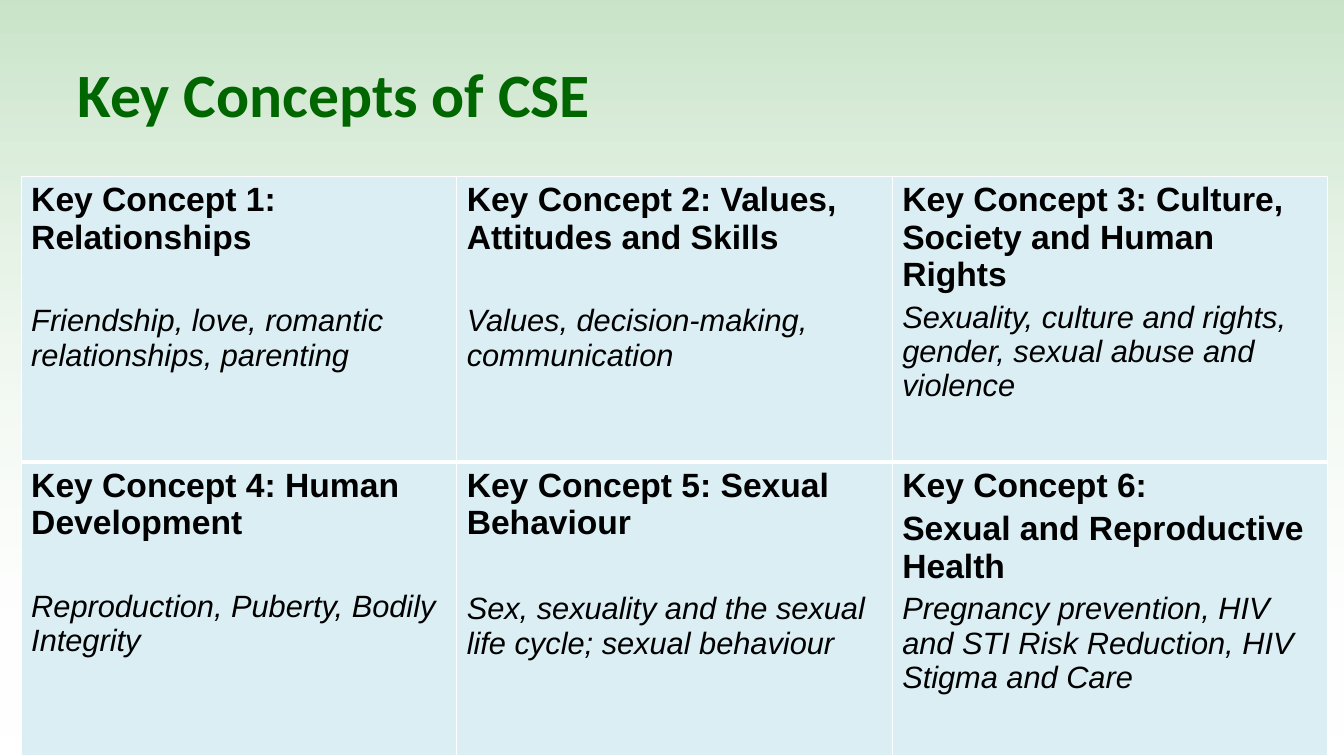
from dataclasses import dataclass

from lxml.etree import SubElement
from pptx import Presentation
from pptx.dml.color import RGBColor
from pptx.enum.shapes import MSO_SHAPE
from pptx.enum.text import MSO_ANCHOR, PP_ALIGN
from pptx.oxml.ns import qn
from pptx.slide import Slide
from pptx.table import _Cell
from pptx.util import Inches, Pt

COLUMNS = 3
COLUMN_WIDTH = 4.32
ROW_HEIGHTS = (2.83, 2.92)
LINE_GAP = 4.5


@dataclass
class Concept:
    headings: list[str]
    topics: str
    gap: float = 34


CONCEPTS = [
    Concept(["Key Concept 1: Relationships"],
            "Friendship, love, romantic relationships, parenting"),
    Concept(["Key Concept 2: Values, Attitudes and Skills"],
            "Values, decision-making, communication"),
    Concept(["Key Concept 3: Culture, Society and Human Rights"],
            "Sexuality, culture and rights, gender, sexual abuse and violence", LINE_GAP),
    Concept(["Key Concept 4: Human Development"],
            "Reproduction, Puberty, Bodily Integrity"),
    Concept(["Key Concept 5: Sexual Behaviour"],
            "Sex, sexuality and the sexual life cycle; sexual behaviour", 36),
    Concept(["Key Concept 6:", "Sexual and Reproductive Health"],
            "Pregnancy prevention, HIV and STI Risk Reduction, HIV Stigma and Care", LINE_GAP),
]


def rgb(color: str) -> RGBColor:
    return RGBColor.from_string(color)


def add_backdrop(s: Slide, width: int, height: int) -> None:
    sp = s.shapes.add_shape(MSO_SHAPE.RECTANGLE, 0, 0, width, height)
    sp.shadow.inherit = False
    sp.line.fill.background()
    sp.fill.gradient()
    sp.fill.gradient_angle = 270
    stops = sp.fill.gradient_stops
    for stop, color, position in zip(stops, ("008000", "FFFFFF"), (0, 1)):
        stop.color.rgb = rgb(color)
        stop.position = position
    colors = sp._element.spPr.find(qn("a:gradFill")).iter(qn("a:srgbClr"))
    for color, opacity in zip(colors, (22, 0)):
        SubElement(color, qn("a:alpha"), val=str(opacity * 1000))
    sp._element.getparent().insert(2, sp._element)


def add_title(s: Slide, text: str) -> None:
    sp = s.shapes.title
    sp.left, sp.top, sp.width, sp.height = (Inches(v) for v in (0.67, 0.3, 12, 1.25))
    tf = sp.text_frame
    tf.text = text
    tf.vertical_anchor = MSO_ANCHOR.MIDDLE
    p = tf.paragraphs[0]
    p.alignment = PP_ALIGN.LEFT
    font = p.runs[0].font
    font.name, font.size, font.bold = "Calibri", Pt(44), True
    font.color.rgb = rgb("006600")


def set_borders(cell: _Cell, color: str, widths: dict[str, float]) -> None:
    tc_pr = cell._tc.get_or_add_tcPr()
    for i, (side, width) in enumerate(widths.items()):
        line = SubElement(tc_pr, qn(f"a:ln{side}"), w=str(Pt(width)))
        SubElement(SubElement(line, qn("a:solidFill")), qn("a:srgbClr"), val=color)
        tc_pr.insert(i, line)


def fill_cell(cell: _Cell, concept: Concept) -> None:
    cell.fill.solid()
    cell.fill.fore_color.rgb = rgb("DBEEF4")
    tf = cell.text_frame
    tf.text = "\n".join([*concept.headings, concept.topics])
    last = len(concept.headings)
    for i, p in enumerate(tf.paragraphs):
        is_topics = i == last
        if i:
            p.space_before = Pt(concept.gap if is_topics else LINE_GAP)
        font = p.runs[0].font
        font.name, font.size = "Arial", Pt(22 if is_topics else 24)
        font.bold, font.italic = not is_topics, is_topics
        font.color.rgb = rgb("000000")


def add_concept_table(s: Slide) -> None:
    table = s.shapes.add_table(
        len(ROW_HEIGHTS), COLUMNS, Inches(0.21), Inches(1.75),
        Inches(COLUMN_WIDTH * COLUMNS), Inches(sum(ROW_HEIGHTS))).table
    for column in table.columns:
        column.width = Inches(COLUMN_WIDTH)
    for row, height in zip(table.rows, ROW_HEIGHTS):
        row.height = Inches(height)
    for i, concept in enumerate(CONCEPTS):
        row, column = divmod(i, COLUMNS)
        cell = table.cell(row, column)
        fill_cell(cell, concept)
        set_borders(cell, "FFFFFF", {"L": 1, "R": 1, "T": 3 if row else 1, "B": 1 if row else 3})


def main() -> None:
    prs = Presentation()
    prs.slide_width, prs.slide_height = Inches(13.33), Inches(7.5)
    s = prs.slides.add_slide(prs.slide_layouts[5])
    add_backdrop(s, prs.slide_width, prs.slide_height)
    add_title(s, "Key Concepts of CSE")
    add_concept_table(s)
    prs.save("out.pptx")


if __name__ == "__main__":
    main()
